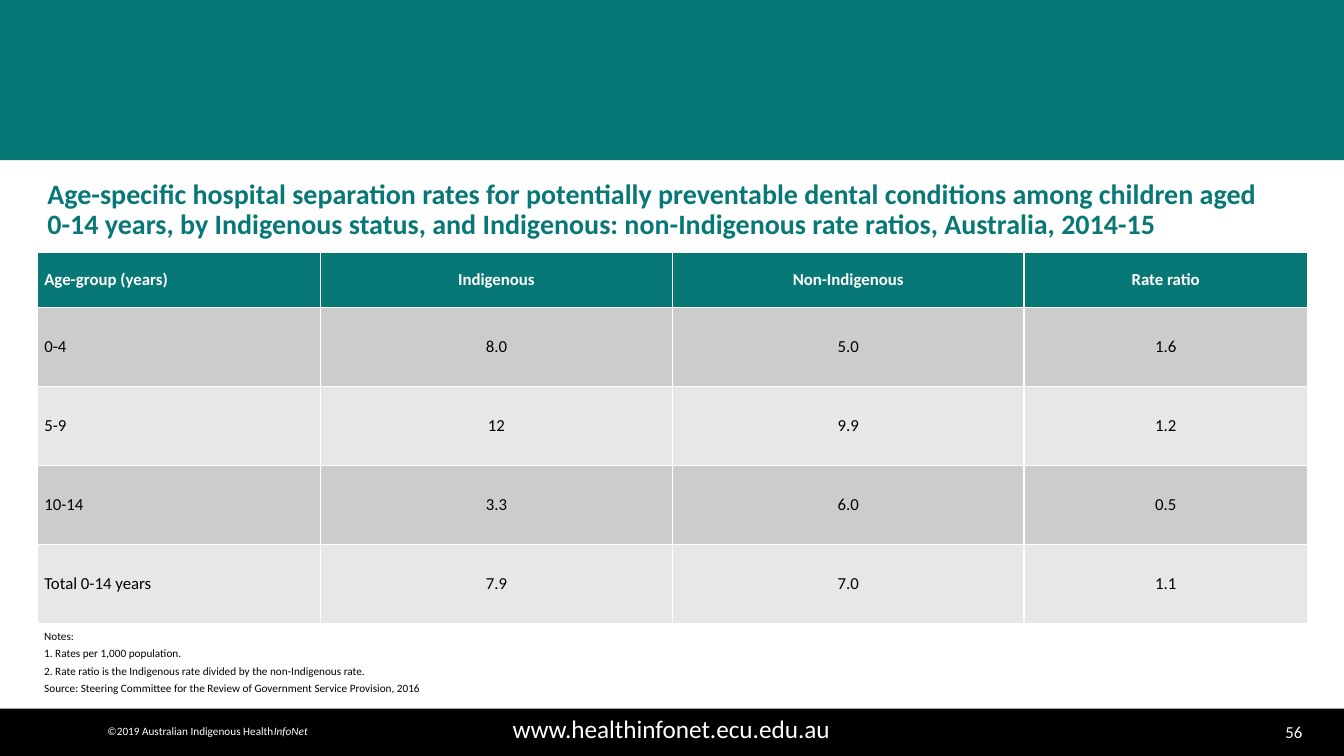
import pptx
import pptx.dml.color
import pptx.enum.shapes
import pptx.enum.text
import pptx.util

TEAL = pptx.dml.color.RGBColor(0x08, 0x78, 0x76)
BLACK = pptx.dml.color.RGBColor(0x00, 0x00, 0x00)
WHITE = pptx.dml.color.RGBColor(0xFF, 0xFF, 0xFF)
DARK = pptx.dml.color.RGBColor(0xCC, 0xCC, 0xCC)
LIGHT = pptx.dml.color.RGBColor(0xE7, 0xE7, 0xE7)

ALIGN = pptx.enum.text.PP_ALIGN
MIDDLE = pptx.enum.text.MSO_ANCHOR.MIDDLE
FIT = pptx.enum.text.MSO_AUTO_SIZE

TITLE = ("Age-specific hospital separation rates for potentially preventable "
         "dental conditions among children aged 0-14 years, by Indigenous status, "
         "and Indigenous: non-Indigenous rate ratios, Australia, 2014-15")
RATES = [
    ["Age-group (years)", "Indigenous", "Non-Indigenous", "Rate ratio"],
    ["0-4", "8.0", "5.0", "1.6"],
    ["5-9", "12", "9.9", "1.2"],
    ["10-14", "3.3", "6.0", "0.5"],
    ["Total 0-14 years", "7.9", "7.0", "1.1"],
]
NOTES = [
    "Notes:",
    "1. Rates per 1,000 population.",
    "2. Rate ratio is the Indigenous rate divided by the non-Indigenous rate.",
    "Source: Steering Committee for the Review of Government Service Provision, 2016",
]


def write(frame, *lines, size=12, color=BLACK, bold=False, align=ALIGN.LEFT,
          after=0, line=None):
    """Fill a text frame; a line is a string or a list of (text, italic) runs."""
    for i, runs in enumerate(lines):
        para = frame.paragraphs[0] if i == 0 else frame.add_paragraph()
        para.alignment = align
        para.space_after = pptx.util.Pt(after)
        if line:
            para.line_spacing = line
        for words, slant in [(runs, False)] if isinstance(runs, str) else runs:
            run = para.add_run()
            run.text = words
            font = run.font
            font.name, font.size = "Calibri", pptx.util.Pt(size)
            font.bold, font.italic = bold, slant
            font.color.rgb = color


class Page:
    """One slide on a grid of 160 columns and 90 rows."""

    def __init__(self, deck):
        self.col = deck.slide_width / 160
        self.row = deck.slide_height / 90
        self.slide = deck.slides.add_slide(deck.slide_layouts[5])
        self.shapes = self.slide.shapes

    def place(self, x, y, w, h):
        return (round(x * self.col), round(y * self.row),
                round(w * self.col), round(h * self.row))

    def band(self, *box, fill):
        band = self.shapes.add_shape(
            pptx.enum.shapes.MSO_SHAPE.RECTANGLE, *self.place(*box))
        band.shadow.inherit = False
        band.fill.solid()
        band.fill.fore_color.rgb = fill
        band.line.fill.background()

    def title(self, words, *box):
        title = self.shapes.title
        title.left, title.top, title.width, title.height = self.place(*box)
        frame = title.text_frame
        frame.auto_size = FIT.NONE
        frame.vertical_anchor = MIDDLE
        write(frame, words, size=20, color=TEAL, bold=True, line=0.9)

    def text(self, *lines, box, wrap=True, fit=FIT.NONE, **style):
        frame = self.shapes.add_textbox(*self.place(*box)).text_frame
        frame.word_wrap = wrap
        frame.auto_size = fit
        write(frame, *lines, **style)

    def table(self, data, x, y, widths, heights):
        place = self.place(x, y, sum(widths), sum(heights))
        table = self.shapes.add_table(len(heights), len(widths), *place).table
        for col, width in zip(table.columns, widths):
            col.width = round(width * self.col)
        for r, (row, height) in enumerate(zip(table.rows, heights)):
            row.height = round(height * self.row)
            head = r == 0
            for c, cell in enumerate(row.cells):
                cell.fill.solid()
                cell.fill.fore_color.rgb = TEAL if head else DARK if r % 2 else LIGHT
                cell.vertical_anchor = MIDDLE
                cell.margin_left = cell.margin_right = pptx.util.Inches(0.07)
                cell.margin_top = cell.margin_bottom = 0
                write(cell.text_frame, data[r][c], bold=head, after=5,
                      color=WHITE if head else BLACK,
                      align=ALIGN.CENTER if c else ALIGN.LEFT)


def main():
    deck = pptx.Presentation()
    deck.slide_width = pptx.util.Inches(13.333)
    deck.slide_height = pptx.util.Inches(7.5)
    page = Page(deck)

    page.band(-0.36, 0, 160.36, 19.08, fill=TEAL)
    page.band(0, 84.36, 160, 5.64, fill=BLACK)
    page.text("56", box=(143.4, 85.3, 12.84, 3.6), color=WHITE, align=ALIGN.RIGHT)
    page.text("www.healthinfonet.ecu.edu.au", box=(7.44, 84.36, 144.96, 4.68),
              size=18, color=WHITE, align=ALIGN.CENTER)
    page.text([("©2019 Australian Indigenous Health", False), ("InfoNet", True)],
              box=(11.4, 85.68, 26.64, 2.88), wrap=False, fit=FIT.SHAPE_TO_FIT_TEXT,
              size=8, color=WHITE, align=ALIGN.CENTER)

    page.title(TITLE, 4.44, 20.04, 147.6, 9.96)
    page.table(RATES, 4.44, 30, [33.72, 41.88, 41.88, 33.72], [6.6] + [9.42] * 4)
    page.text(*NOTES, box=(4.08, 74.28, 80, 9.24), fit=FIT.SHAPE_TO_FIT_TEXT,
              size=8, after=3)

    deck.save("out.pptx")


if __name__ == "__main__":
    main()
